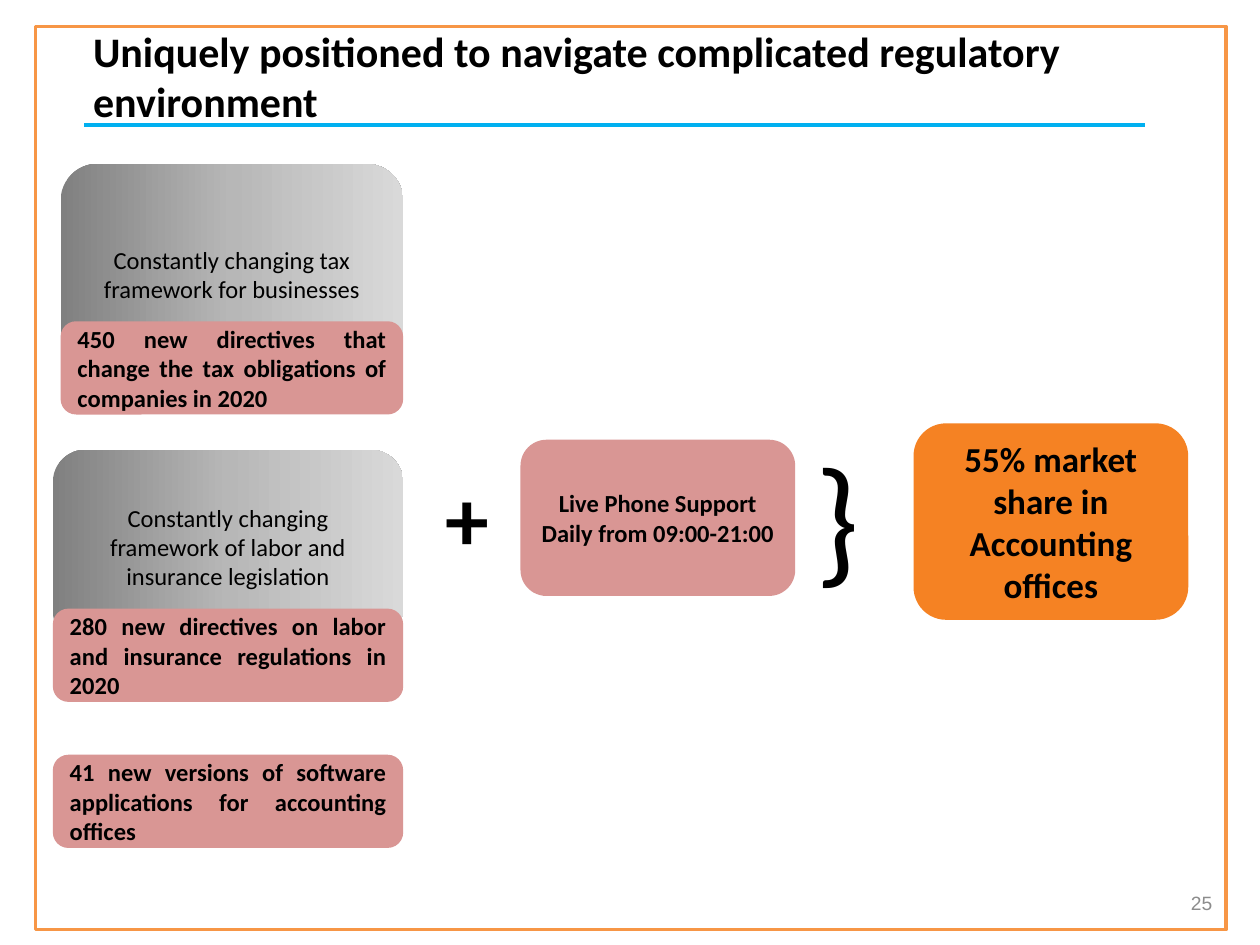
"""Build the slide on navigating a complicated regulatory environment."""
from copy import deepcopy

from lxml.etree import SubElement
from pptx import Presentation
from pptx.dml.color import RGBColor
from pptx.enum.shapes import MSO_CONNECTOR as Connector, MSO_SHAPE as Shape
from pptx.enum.text import MSO_ANCHOR as Anchor, PP_ALIGN as Align
from pptx.oxml.ns import qn
from pptx.util import Pt

BLACK = RGBColor(0x00, 0x00, 0x00)
FRAME_ORANGE = RGBColor(0xF7, 0x96, 0x46)
RULE_BLUE = RGBColor(0x00, 0xB0, 0xF0)
NUMBER_GRAY = RGBColor(0x8C, 0x8C, 0x8C)
ROSE = RGBColor(0xD9, 0x96, 0x94)
RESULT_ORANGE = RGBColor(0xF5, 0x82, 0x23)
GRAYS = (
    RGBColor(0x80, 0x80, 0x80),
    RGBColor(0xB7, 0xB7, 0xB7),
    RGBColor(0xD9, 0xD9, 0xD9),
)

RIGHT_EDGE = 230.4
FACT_HEIGHT = 53.3
TOPICS = (
    (34.6, 93.6, 126, "Constantly changing tax framework for businesses"),
    (30.2, 257, 110.9, "Constantly changing framework of labor and insurance legislation"),
)
FACTS = (
    (34.6, 183.6, "450 new directives that change the tax obligations of companies in 2020"),
    (30.2, 347.8, "280 new directives on labor and insurance regulations in 2020"),
    (30.2, 431.3, "41 new versions of software applications for accounting offices"),
)


def write_text(shape, text, size, align, anchor, bold=False, color=BLACK, font="Calibri"):
    """Fill a shape with one paragraph, breaking lines at newlines."""
    frame = shape.text_frame
    frame.word_wrap = True
    frame.vertical_anchor = anchor
    paragraph = frame.paragraphs[0]
    paragraph.alignment = align
    for index, line in enumerate(text.split("\n")):
        if index:
            paragraph.add_line_break()
        run = paragraph.add_run()
        run.text = line
        run.font.name = font
        run.font.size = Pt(size)
        run.font.bold = bold
        run.font.color.rgb = color


def add_label(slide, box, text, size, align=Align.CENTER, anchor=Anchor.TOP, **style):
    """Add a text box."""
    label = slide.shapes.add_textbox(*map(Pt, box))
    write_text(label, text, size, align, anchor, **style)


def add_frame(slide, box):
    """Add the outline around the slide."""
    frame = slide.shapes.add_shape(Shape.RECTANGLE, *map(Pt, box))
    frame.shadow.inherit = False
    frame.fill.background()
    frame.line.color.rgb = FRAME_ORANGE
    frame.line.width = Pt(2)


def add_rule(slide, left, right, top):
    """Add the horizontal line under the title."""
    rule = slide.shapes.add_connector(Connector.STRAIGHT, Pt(left), Pt(top), Pt(right), Pt(top))
    rule.line.color.rgb = RULE_BLUE
    rule.line.width = Pt(2.25)
    SubElement(rule.element.spPr, qn("a:effectLst"))


def fill_gradient(shape, colors):
    """Fill a shape with evenly spaced colors from left to right."""
    shape.fill.gradient()
    shape.fill.gradient_angle = 0
    stop_list = shape.element.xpath(".//a:gsLst")[0]
    while len(stop_list) < len(colors):
        stop_list.append(deepcopy(stop_list[0]))
    for index, (stop, color) in enumerate(zip(shape.fill.gradient_stops, colors)):
        stop.position = index / (len(colors) - 1)
        stop.color.rgb = color


def add_card(slide, box, text, fill, size=14, align=Align.CENTER, bold=True):
    """Add a rounded card with a solid color or a gradient of several."""
    card = slide.shapes.add_shape(Shape.ROUNDED_RECTANGLE, *map(Pt, box))
    card.shadow.inherit = False
    card.line.fill.background()
    if isinstance(fill, RGBColor):
        card.fill.solid()
        card.fill.fore_color.rgb = fill
    else:
        fill_gradient(card, fill)
    write_text(card, text, size, align, Anchor.MIDDLE, bold)


def main():
    """Build and save the slide."""
    presentation = Presentation()
    presentation.slide_width, presentation.slide_height = Pt(720), Pt(540)
    slide = presentation.slides.add_slide(presentation.slide_layouts[6])

    add_frame(slide, (20.2, 15.1, 680.4, 516.2))
    add_rule(slide, 48.2, 654.5, 71.3)
    add_label(slide, (46.1, 10.8, 569.5, 65.5),
              "Uniquely positioned to navigate complicated regulatory environment",
              24, Align.LEFT, bold=True)
    add_label(slide, (532.1, 501.8, 167.8, 28.8), "25", 11, Align.RIGHT, Anchor.MIDDLE,
              color=NUMBER_GRAY, font="Arial")

    for left, top, height, text in TOPICS:
        add_card(slide, (left, top, RIGHT_EDGE - left, height), text, GRAYS, bold=False)
    for left, top, text in FACTS:
        add_card(slide, (left, top, RIGHT_EDGE - left, FACT_HEIGHT), text, ROSE,
                 align=Align.JUSTIFY)

    add_label(slide, (236.2, 261.4, 61.2, 67.7), "+", 50, bold=True)
    add_card(slide, (297.4, 251.3, 157, 89.3),
             "Live Phone Support\nDaily from 09:00-21:00", ROSE)
    add_label(slide, (447.8, 241.9, 61.2, 104.4), "}", 80)
    add_card(slide, (522, 241.9, 157, 112.3), "55% market share in Accounting offices",
             RESULT_ORANGE, size=20)

    presentation.save("out.pptx")


if __name__ == "__main__":
    main()
